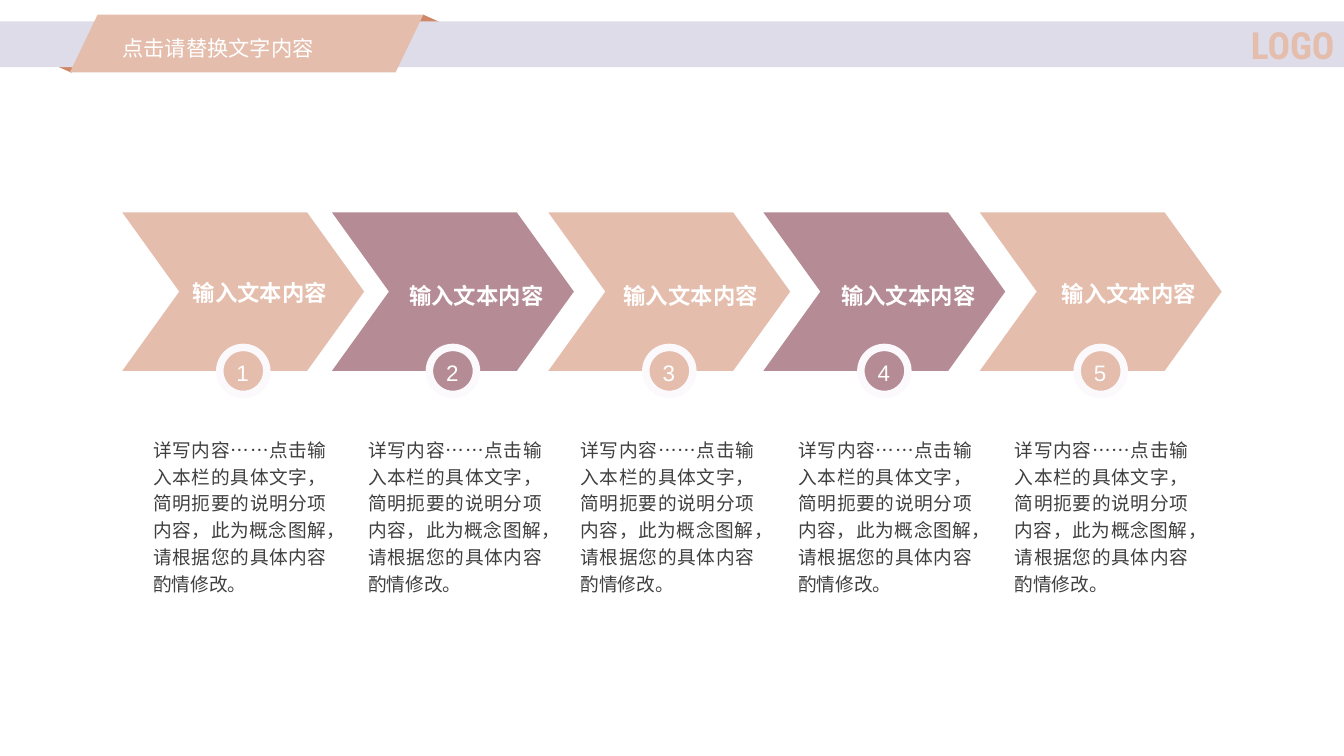
import pptx
import pptx.dml.color
import pptx.enum.shapes
import pptx.enum.text
import pptx.oxml.ns
import pptx.util
from lxml import etree

Inches = pptx.util.Inches
RGBColor = pptx.dml.color.RGBColor
Shape = pptx.enum.shapes.MSO_SHAPE
Align = pptx.enum.text.PP_ALIGN
Anchor = pptx.enum.text.MSO_ANCHOR

PEACH = RGBColor(0xE4, 0xBD, 0xAC)
MAUVE = RGBColor(0xB5, 0x8C, 0x95)
RUST = RGBColor(0xCE, 0x88, 0x68)
LAVENDER = RGBColor(0xDE, 0xDC, 0xE9)
PALE = RGBColor(0xFB, 0xF9, 0xFC)
WHITE = RGBColor(0xFF, 0xFF, 0xFF)
GREY = RGBColor(0x40, 0x40, 0x40)

CJK_FONT = "Noto Sans CJK SC"
HEADING = "输入文本内容"
DETAIL = "详写内容……点击输入本栏的具体文字，简明扼要的说明分项内容，此为概念图解，请根据您的具体内容酌情修改。"

# left edge, heading box (offset, top, width, height), detail offset
STEPS = [
    (0.91, (0.52, 0.5, 1.01, 0.2), 0.23),
    (2.47, (0.49, 0.53, 1.17, 0.18), 0.27),
    (4.08, (0.45, 0.53, 1.22, 0.18), 0.24),
    (5.68, (0.48, 0.53, 1.2, 0.18), 0.26),
    (7.29, (0.49, 0.53, 1.24, 0.15), 0.26),
]


def add_filled(slide, preset, box, color):
    """Add a flat preset shape without outline or shadow."""
    shape = slide.shapes.add_shape(preset, *map(Inches, box))
    shape.shadow.inherit = False
    shape.fill.solid()
    shape.fill.fore_color.rgb = color
    shape.line.fill.background()
    return shape


def write(shape, text, size, font, color, bold=False, align=Align.LEFT,
          anchor=Anchor.MIDDLE, spacing=None, insets=(0, 0)):
    """Write one formatted paragraph into a shape."""
    frame = shape.text_frame
    frame.text = text
    frame.word_wrap = True
    frame.vertical_anchor = anchor
    frame.margin_left = frame.margin_right = Inches(insets[0])
    frame.margin_top = frame.margin_bottom = Inches(insets[1])
    paragraph = frame.paragraphs[0]
    paragraph.alignment = align
    paragraph.line_spacing = spacing
    run = paragraph.runs[0]
    run.font.size = pptx.util.Pt(size)
    run.font.bold = bold
    run.font.color.rgb = color
    run.font.name = font
    east_asian = etree.SubElement(run.font._element, pptx.oxml.ns.qn("a:ea"))
    east_asian.set("typeface", font)


def add_text(slide, box, *args, **kwargs):
    """Add a text box holding one formatted paragraph."""
    write(slide.shapes.add_textbox(*map(Inches, box)), *args, **kwargs)


def add_header(slide, left, top, width):
    """Place the band, its folded ribbon and the slide title."""
    add_filled(slide, Shape.ISOSCELES_TRIANGLE, (left + 2.7, top, 0.9, 0.2), RUST)
    lower_fold = add_filled(slide, Shape.ISOSCELES_TRIANGLE,
                            (left + 0.08, top + 0.23, 0.9, 0.2), RUST)
    lower_fold.rotation = 180
    band = add_filled(slide, Shape.RECTANGLE, (left, top + 0.05, width, 0.34), LAVENDER)
    write(band, "LOGO", 20, "Roboto Condensed", PEACH, bold=True,
          align=Align.RIGHT, insets=(0.07, 0.04))
    ribbon = add_filled(slide, Shape.PARALLELOGRAM, (left + 0.52, top, 2.63, 0.43), PEACH)
    ribbon.adjustments[0] = 0.48
    add_text(slide, (left + 0.84, top + 0.02, 1.97, 0.36), "点击请替换文字内容",
             11.4, "Arial", WHITE, anchor=Anchor.TOP, spacing=1.5, insets=(0.07, 0.04))


def add_step(slide, number, left, top, heading_box, detail_offset, color):
    """Place one chevron with its heading, numbered badge and detail text."""
    width, height, badge = 1.8, 1.18, 0.35
    chevron = add_filled(slide, Shape.CHEVRON, (left, top, width, height), color)
    chevron.adjustments[0] = 0.36
    offset, drop, *heading_size = heading_box
    add_text(slide, (left + offset, top + drop, *heading_size), HEADING, 12,
             CJK_FONT, WHITE, bold=True, align=Align.CENTER)
    center, bottom = left + width / 2, top + height
    disc = add_filled(slide, Shape.OVAL,
                      (center - badge / 2, bottom - badge / 2, badge, badge), color)
    disc.line.color.rgb = PALE
    disc.line.width = pptx.util.Pt(4)
    add_text(slide, (center - 0.05, bottom - 0.09, 0.1, 0.2), str(number),
             12, "Arial", WHITE)
    add_text(slide, (left + detail_offset, top + 1.65, 1.29, 1.19), DETAIL, 10,
             CJK_FONT, GREY, align=Align.JUSTIFY, anchor=Anchor.TOP, spacing=1.2)


def main():
    """Build and save the five-step slide."""
    deck = pptx.Presentation()
    deck.slide_width = Inches(10)
    deck.slide_height = deck.slide_width * 9 // 16
    slide = deck.slides.add_slide(deck.slide_layouts[6])
    add_header(slide, 0, 0.11, 10)
    for number, (left, heading_box, detail_offset) in enumerate(STEPS, 1):
        color = PEACH if number % 2 else MAUVE
        add_step(slide, number, left, 1.58, heading_box, detail_offset, color)
    deck.save("out.pptx")


if __name__ == "__main__":
    main()
